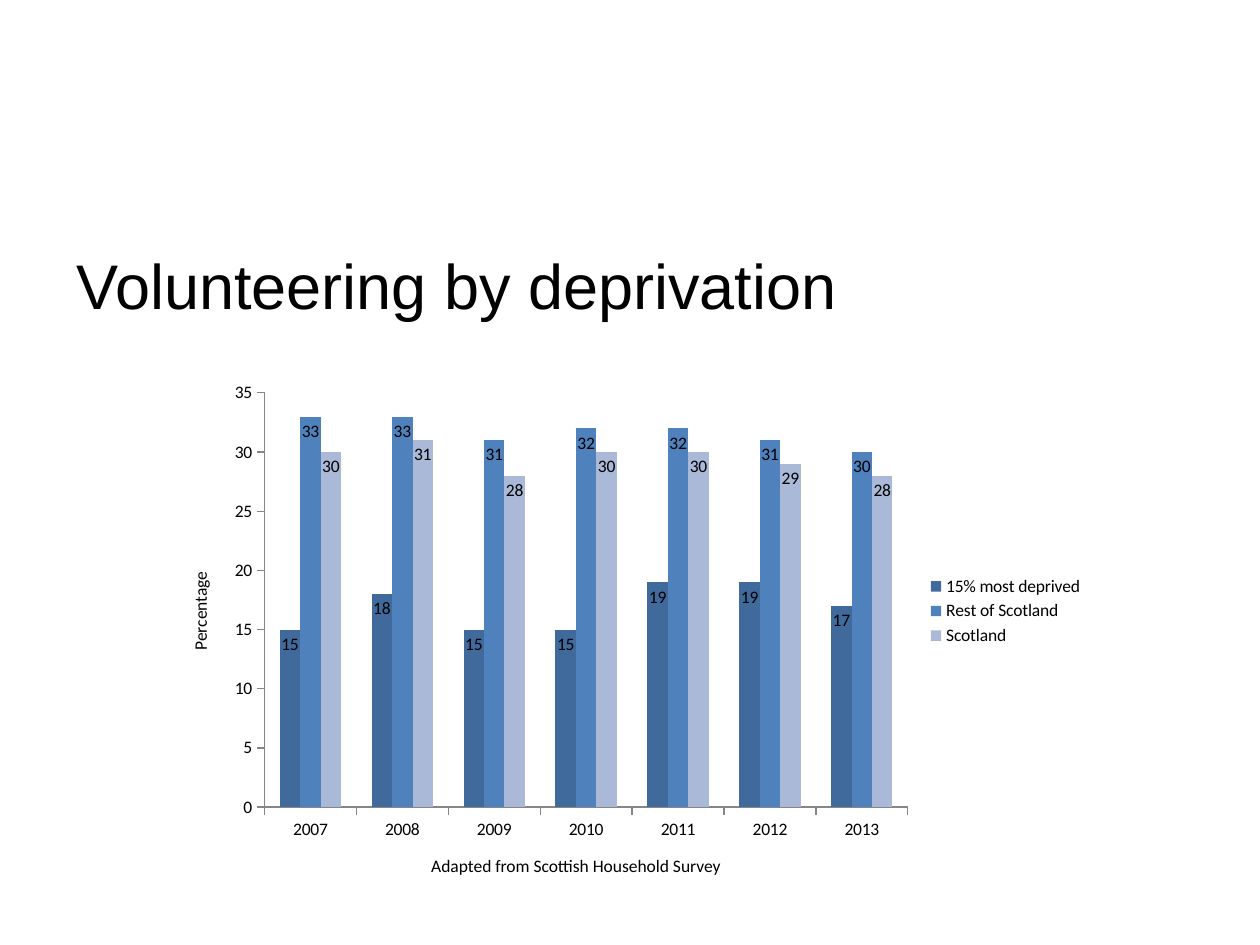
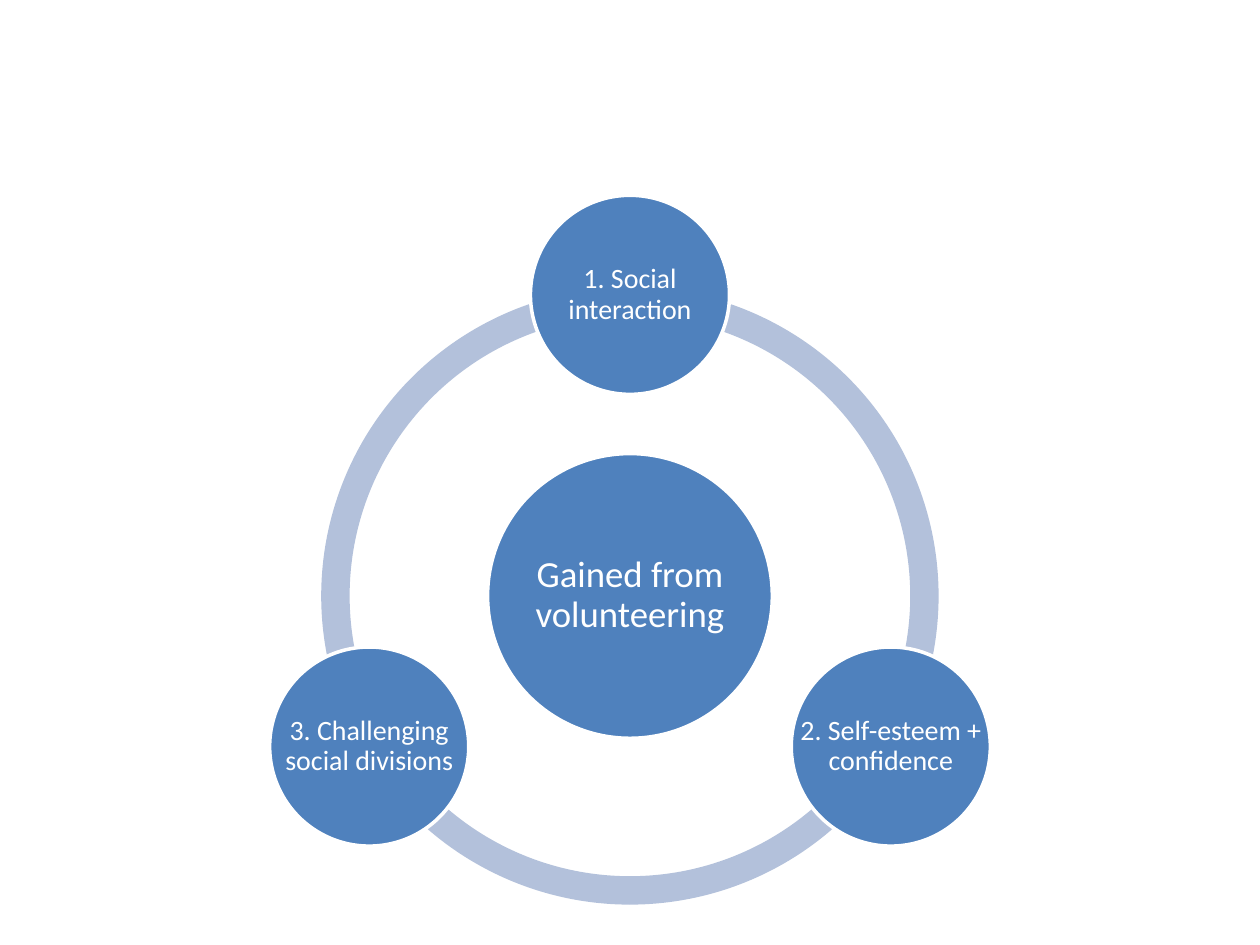
import math
from dataclasses import dataclass

from lxml import etree
from pptx import Presentation
from pptx.chart.data import CategoryChartData
from pptx.dml.color import RGBColor
from pptx.enum import chart as ch, shapes, text
from pptx.util import Inches, Pt

BLACK, WHITE, BLUE, PALE = "000000", "FFFFFF", "4F81BD", "B3C1DB"
AXIS_GREY = "868686"
BODY_FONT, TITLE_FONT = "Calibri", "Arial"


@dataclass(frozen=True)
class Box:
    left: float
    top: float
    width: float
    height: float

    def emu(self) -> list:
        return [Inches(v) for v in (self.left, self.top, self.width, self.height)]


@dataclass(frozen=True)
class Style:
    size: float
    color: str = BLACK
    font: str = BODY_FONT
    align: text.PP_ALIGN = text.PP_ALIGN.CENTER
    anchor: text.MSO_ANCHOR = text.MSO_ANCHOR.MIDDLE
    inset_x: float = 0.1
    inset_y: float = 0.05
    spacing: float = 1.0


@dataclass(frozen=True)
class Bubble:
    label: str
    x: float
    y: float
    diameter: float
    style: Style


@dataclass(frozen=True)
class Series:
    name: str
    values: tuple
    color: str


TITLE = Style(36, font=TITLE_FONT, align=text.PP_ALIGN.LEFT)
CAPTION = Style(10, anchor=text.MSO_ANCHOR.TOP)
HUB = Style(21, WHITE, inset_x=0.03, inset_y=0.03, spacing=0.9)
GAIN = Style(16, WHITE, inset_x=0.02, inset_y=0.02, spacing=0.9)

YEARS = [str(year) for year in range(2007, 2014)]
SERIES = [
    Series("15% most deprived", (15, 18, 15, 15, 19, 19, 17), "416A9C"),
    Series("Rest of Scotland", (33, 33, 31, 32, 32, 31, 30), BLUE),
    Series("Scotland", (30, 31, 28, 30, 30, 29, 28), "AAB9D7"),
]
GAINS = ["1. Social interaction", "2. Self-esteem + confidence", "3. Challenging social divisions"]


def rgb(color: str) -> RGBColor:
    return RGBColor.from_string(color)


def set_font(font, size: float, color: str = BLACK, name: str = BODY_FONT) -> None:
    font.size = Pt(size)
    font.bold = False
    font.name = name
    font.color.rgb = rgb(color)


def add_text(slide, box: Box, words: str, style: Style) -> None:
    tf = slide.shapes.add_textbox(*box.emu()).text_frame
    tf.word_wrap = True
    tf.vertical_anchor = style.anchor
    tf.margin_left = tf.margin_right = Inches(style.inset_x)
    tf.margin_top = tf.margin_bottom = Inches(style.inset_y)
    tf.text = words
    p = tf.paragraphs[0]
    p.alignment = style.align
    p.line_spacing = style.spacing
    set_font(p.runs[0].font, style.size, style.color, style.font)


def add_filled(slide, kind: shapes.MSO_SHAPE, box: Box, fill: str):
    sp = slide.shapes.add_shape(kind, *box.emu())
    sp.shadow.inherit = False
    sp.fill.solid()
    sp.fill.fore_color.rgb = rgb(fill)
    sp.line.fill.background()
    return sp


def set_plot_layout(chart, box: Box) -> None:
    plot_area = chart._chartSpace.chart.plotArea
    ns = plot_area.nsmap["c"]
    for old in plot_area.findall(f"{{{ns}}}layout"):
        plot_area.remove(old)
    layout = etree.Element(f"{{{ns}}}layout")
    manual = etree.SubElement(layout, f"{{{ns}}}manualLayout")
    settings = {"layoutTarget": "inner", "xMode": "edge", "yMode": "edge",
                "x": box.left, "y": box.top, "w": box.width, "h": box.height}
    for tag, value in settings.items():
        etree.SubElement(manual, f"{{{ns}}}{tag}").set("val", str(value))
    plot_area.insert(0, layout)


def add_column_chart(slide, box: Box) -> None:
    data = CategoryChartData()
    data.categories = YEARS
    for series in SERIES:
        data.add_series(series.name, series.values)
    chart = slide.shapes.add_chart(ch.XL_CHART_TYPE.COLUMN_CLUSTERED, *box.emu(), data).chart
    set_font(chart.font, 10)
    chart.has_title = False
    chart.has_legend = True
    chart.legend.position = ch.XL_LEGEND_POSITION.RIGHT
    chart.legend.include_in_layout = False
    set_plot_layout(chart, Box(0.108, 0.042, 0.69, 0.87))

    plot = chart.plots[0]
    plot.gap_width = 150
    plot.overlap = 0
    plot.vary_by_categories = False
    for drawn, series in zip(plot.series, SERIES):
        drawn.format.fill.solid()
        drawn.format.fill.fore_color.rgb = rgb(series.color)
        labels = drawn.data_labels
        labels.show_value = True
        labels.position = ch.XL_LABEL_POSITION.INSIDE_END
        set_font(labels.font, 10)

    for axis in (chart.category_axis, chart.value_axis):
        axis.has_major_gridlines = False
        axis.major_tick_mark = ch.XL_TICK_MARK.OUTSIDE
        axis.minor_tick_mark = ch.XL_TICK_MARK.NONE
        axis.format.line.color.rgb = rgb(AXIS_GREY)
        axis.format.line.width = Pt(0.75)
    value_axis = chart.value_axis
    value_axis.minimum_scale, value_axis.maximum_scale, value_axis.major_unit = 0, 35, 5
    tf = value_axis.axis_title.text_frame
    tf.text = "Percentage"
    set_font(tf.paragraphs[0].runs[0].font, 10)


def add_bubble(slide, bubble: Bubble) -> None:
    d = bubble.diameter
    box = Box(bubble.x - d / 2, bubble.y - d / 2, d, d)
    sp = add_filled(slide, shapes.MSO_SHAPE.OVAL, box, BLUE)
    sp.line.color.rgb = rgb(WHITE)
    sp.line.width = Pt(2)
    add_text(slide, box, bubble.label, bubble.style)


def add_arc(slide, box: Box, start: float, end: float) -> None:
    sp = add_filled(slide, shapes.MSO_SHAPE.BLOCK_ARC, box, PALE)
    sp.adjustments[0] = start * 0.6
    sp.adjustments[1] = end * 0.6
    sp.adjustments[2] = 0.046


def build_deprivation(slide) -> None:
    add_text(slide, Box(0.51, 1.86, 8.98, 0.79), "Volunteering by deprivation", TITLE)
    add_column_chart(slide, Box(1.3, 2.96, 7.4, 3.78))
    add_text(slide, Box(1.93, 6.74, 5.28, 0.27), "Adapted from Scottish Household Survey", CAPTION)


def build_gains(slide) -> None:
    x, y, ring, orbit = 5, 4.73, 4.9, 2.39
    ring_box = Box(x - ring / 2, y - ring / 2, ring, ring)
    for start, end in ((90, 162), (18, 90), (162, 18)):
        add_arc(slide, ring_box, start, end)
    add_bubble(slide, Bubble("Gained from volunteering", x, y, 2.26, HUB))
    for i, label in enumerate(GAINS):
        angle = math.radians(360 / len(GAINS) * i - 90)
        add_bubble(slide, Bubble(label, x + orbit * math.cos(angle),
                                 y + orbit * math.sin(angle), 1.58, GAIN))


def main() -> None:
    prs = Presentation()
    prs.slide_width, prs.slide_height = Inches(10), Inches(7.5)
    for build in (build_deprivation, build_gains):
        build(prs.slides.add_slide(prs.slide_layouts[6]))
    prs.save("out.pptx")


if __name__ == "__main__":
    main()
